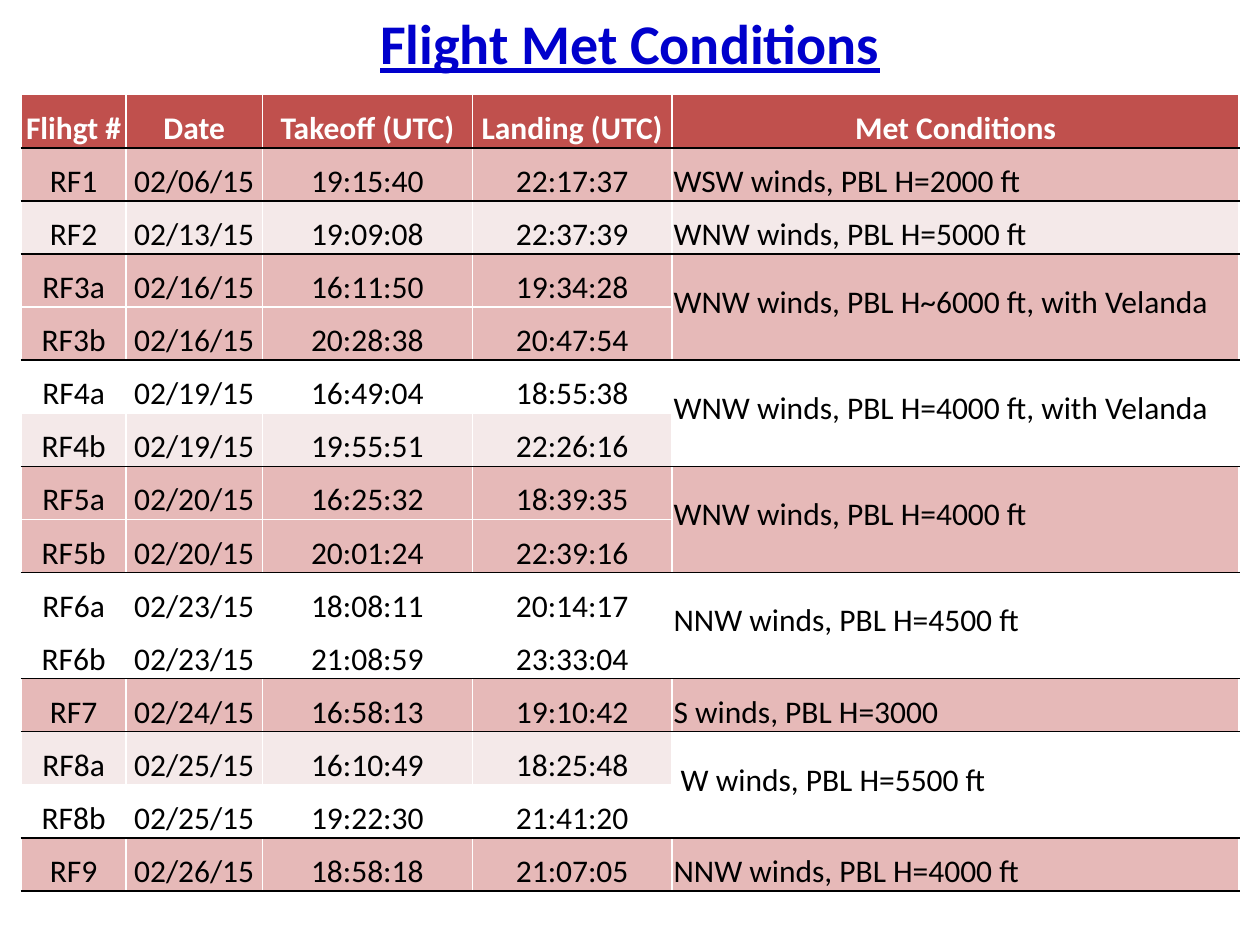
from pptx import Presentation
from pptx.dml.color import RGBColor
from pptx.enum.text import MSO_ANCHOR, PP_ALIGN
from pptx.oxml import parse_xml
from pptx.oxml.ns import nsdecls
from pptx.util import Cm, Pt

BLUE = RGBColor(0x00, 0x00, 0xCC)
RED = RGBColor(0xC0, 0x50, 0x4D)
ROSE = RGBColor(0xE6, 0xB9, 0xB8)
PALE = RGBColor(0xF4, 0xE9, 0xE9)
WHITE = RGBColor(0xFF, 0xFF, 0xFF)
BLACK = RGBColor(0x00, 0x00, 0x00)

NO_GRID_STYLE = "{2D5ABB26-0587-4C30-8999-92F81FD0307C}"
COL_WIDTHS = [2.11, 2.75, 4.23, 4.03, 11.43]
ROW_HEIGHT = 1.07
LINE_HEIGHT = 0.77
INSET = 0.03

TITLE_FONT = {"name": "Calibri", "size": Pt(32), "bold": True, "underline": True}
HEAD_FONT = {"name": "Calibri", "size": Pt(18), "bold": True}
BODY_FONT = {"name": "Calibri", "size": Pt(18), "bold": False}

HEADERS = ["Flihgt #", "Date", "Takeoff (UTC)", "Landing (UTC)", "Met Conditions"]

# Each day: conditions, their fill, and the flights with their row fill
DAYS = [
    ("WSW winds, PBL H=2000 ft", ROSE,
     [("RF1", "02/06/15", "19:15:40", "22:17:37", ROSE)]),
    ("WNW winds, PBL H=5000 ft", PALE,
     [("RF2", "02/13/15", "19:09:08", "22:37:39", PALE)]),
    ("WNW winds, PBL H~6000 ft, with Velanda", ROSE,
     [("RF3a", "02/16/15", "16:11:50", "19:34:28", ROSE),
      ("RF3b", "02/16/15", "20:28:38", "20:47:54", ROSE)]),
    ("WNW winds, PBL H=4000 ft, with Velanda", None,
     [("RF4a", "02/19/15", "16:49:04", "18:55:38", None),
      ("RF4b", "02/19/15", "19:55:51", "22:26:16", PALE)]),
    ("WNW winds, PBL H=4000 ft", ROSE,
     [("RF5a", "02/20/15", "16:25:32", "18:39:35", ROSE),
      ("RF5b", "02/20/15", "20:01:24", "22:39:16", ROSE)]),
    ("NNW winds, PBL H=4500 ft", None,
     [("RF6a", "02/23/15", "18:08:11", "20:14:17", None),
      ("RF6b", "02/23/15", "21:08:59", "23:33:04", None)]),
    ("S winds, PBL H=3000", ROSE,
     [("RF7", "02/24/15", "16:58:13", "19:10:42", ROSE)]),
    (" W winds, PBL H=5500 ft", None,
     [("RF8a", "02/25/15", "16:10:49", "18:25:48", PALE),
      ("RF8b", "02/25/15", "19:22:30", "21:41:20", None)]),
    ("NNW winds, PBL H=4000 ft", ROSE,
     [("RF9", "02/26/15", "18:58:18", "21:07:05", ROSE)]),
]


def add_text(tf, text, font, color, align):
    p = tf.paragraphs[0]
    p.alignment = align
    r = p.add_run()
    r.text = text
    for name, value in font.items():
        setattr(r.font, name, value)
    r.font.color.rgb = color


def add_title(s, text):
    tf = s.shapes.add_textbox(Cm(0), Cm(0.05), Cm(25.4), Cm(1.9)).text_frame
    tf.word_wrap = True
    add_text(tf, text, TITLE_FONT, BLUE, PP_ALIGN.CENTER)


def format_cell(cell, fill, top, bottom):
    margins = {"margin_left": INSET, "margin_right": INSET,
               "margin_top": INSET, "margin_bottom": 0}
    for name, value in margins.items():
        setattr(cell, name, Cm(value))
    cell.vertical_anchor = MSO_ANCHOR.BOTTOM
    # Borders come before the fill in the cell properties
    tc_pr = cell._tc.get_or_add_tcPr()
    for side, color in (("L", WHITE), ("R", WHITE), ("T", top), ("B", bottom)):
        tc_pr.append(parse_xml(
            f'<a:ln{side} {nsdecls("a")} w="{Pt(1)}"><a:solidFill>'
            f'<a:srgbClr val="{color}"/></a:solidFill></a:ln{side}>'))
    if fill is None:
        cell.fill.background()
    else:
        cell.fill.solid()
        cell.fill.fore_color.rgb = fill


def add_day(table, row, conditions, conditions_fill, flights):
    last = len(flights) - 1
    for i, (*values, fill) in enumerate(flights):
        top = WHITE if i else BLACK
        bottom = BLACK if i == last else WHITE
        for col, value in enumerate(values):
            cell = table.cell(row + i, col)
            format_cell(cell, fill, top, bottom)
            add_text(cell.text_frame, value, BODY_FONT, BLACK, PP_ALIGN.CENTER)
        format_cell(table.cell(row + i, 4), conditions_fill, BLACK, BLACK)

    # Conditions cover all flights of the day
    cell = table.cell(row, 4)
    if last:
        cell.merge(table.cell(row + last, 4))
        cell.margin_bottom = Cm(LINE_HEIGHT)
    add_text(cell.text_frame, conditions, BODY_FONT, BLACK, PP_ALIGN.LEFT)


def add_flight_table(s):
    n_rows = 1 + sum(len(flights) for _, _, flights in DAYS)
    frame = s.shapes.add_table(n_rows, len(HEADERS), Cm(0.43), Cm(1.91),
                               Cm(sum(COL_WIDTHS)), Cm(ROW_HEIGHT * n_rows))
    table = frame.table
    table._tbl.tblPr[0].text = NO_GRID_STYLE
    table.horz_banding = False
    for column, width in zip(table.columns, COL_WIDTHS):
        column.width = Cm(width)
    for table_row in table.rows:
        table_row.height = Cm(ROW_HEIGHT)

    # Header row
    for col, header in enumerate(HEADERS):
        cell = table.cell(0, col)
        format_cell(cell, RED, WHITE, BLACK)
        add_text(cell.text_frame, header, HEAD_FONT, WHITE, PP_ALIGN.CENTER)

    # Flight days
    row = 1
    for conditions, fill, flights in DAYS:
        add_day(table, row, conditions, fill, flights)
        row += len(flights)


def main():
    prs = Presentation()
    prs.slide_width, prs.slide_height = Cm(25.4), Cm(19.05)
    s = prs.slides.add_slide(prs.slide_layouts[6])
    add_flight_table(s)
    add_title(s, "Flight Met Conditions")
    prs.save("out.pptx")


if __name__ == "__main__":
    main()
